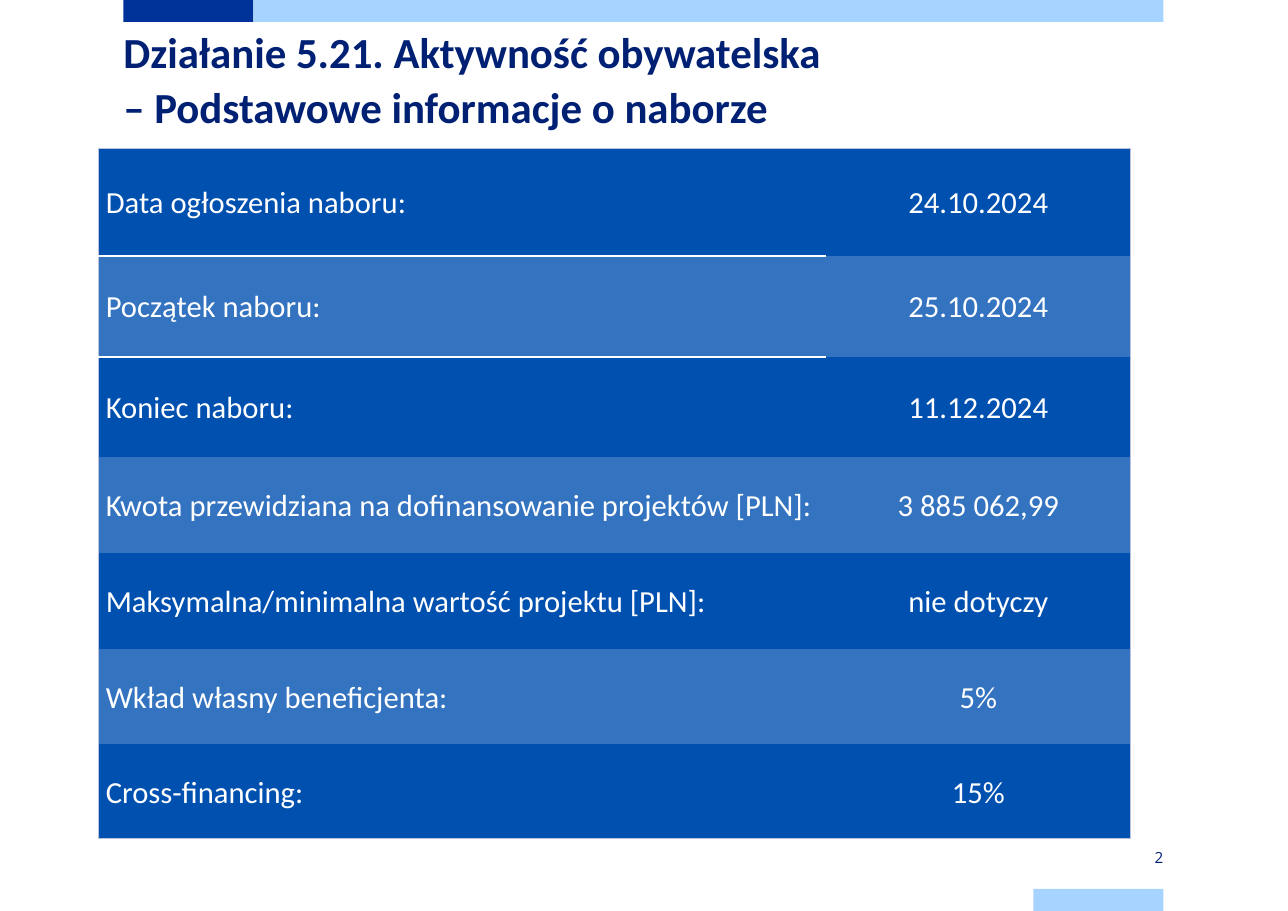
from pptx import Presentation
from pptx.dml.color import RGBColor as RGB
from pptx.enum.shapes import MSO_SHAPE as Shape
from pptx.enum.text import MSO_ANCHOR as Anchor, MSO_AUTO_SIZE as AutoSize, PP_ALIGN as Align
from pptx.oxml import parse_xml
from pptx.oxml.ns import nsdecls
from pptx.util import Inches, Pt

THEME = {
    "navy": "003399", "sky": "A6D3FF", "row": "0050B0", "band": "3373C0",
    "edge": "BDC2DC", "rule": "FFFFFF",
    "title": {"name": "Calibri", "size": Pt(28), "bold": True, "color": "002073"},
    "cell": {"name": "Calibri", "size": Pt(20), "bold": False, "color": "FFFFFF"},
    "number": {"name": "Open Sans", "size": Pt(10), "bold": False, "color": "002073"},
}
PLAIN_TABLE = "{2D5ABB26-0587-4C30-8999-92F81FD0307C}"


def style(paragraph, look, **layout):
    for key, value in layout.items():
        setattr(paragraph, key, value)
    for key, value in THEME[look].items():
        if key == "color":
            paragraph.font.color.rgb = RGB.from_string(value)
        else:
            setattr(paragraph.font, key, value)


def set_frame(frame, anchor, top=0, bottom=0):
    values = {"margin_left": 0, "margin_right": 0, "margin_top": top, "margin_bottom": bottom,
              "word_wrap": True, "auto_size": AutoSize.NONE, "vertical_anchor": anchor}
    for key, value in values.items():
        setattr(frame, key, value)


deck = Presentation()
deck.slide_width, deck.slide_height = Inches(11.69), Inches(8.27)
slide = deck.slides.add_slide(deck.slide_layouts[5])

# Page grid: eight columns between the margins
LEFT, COLUMN, BAR = Inches(1.12), Inches(1.18), Inches(0.2)
foot = deck.slide_height - BAR

# Bars at the page edges: first column, columns, top, colour
for first, span, top, colour in [(0, 1, 0, "navy"), (1, 7, 0, "sky"), (7, 1, foot, "sky")]:
    bar = slide.shapes.add_shape(Shape.RECTANGLE, LEFT + first * COLUMN, top, span * COLUMN, BAR)
    bar.shadow.inherit = False
    bar.fill.solid()
    bar.fill.fore_color.rgb = RGB.from_string(THEME[colour])
    bar.line.fill.background()

# Title
title = slide.shapes.title
title.left, title.top, title.width, title.height = LEFT, BAR, Inches(10.24), Inches(1.1)
set_frame(title.text_frame, Anchor.TOP)
heading = title.text_frame.paragraphs[0]
heading.add_run().text = "Działanie 5.21. Aktywność obywatelska"
heading.add_line_break()
heading.add_run().text = "– Podstawowe informacje o naborze"
style(heading, "title", alignment=Align.LEFT, line_spacing=Pt(36))

# Call details
details = [
    ("Data ogłoszenia naboru:", "24.10.2024", 0.97),
    ("Początek naboru:", "25.10.2024", 0.92),
    ("Koniec naboru:", "11.12.2024", 0.91),
    ("Kwota przewidziana na dofinansowanie projektów [PLN]:", "3 885 062,99", 0.87),
    ("Maksymalna/minimalna wartość projektu [PLN]:", "nie dotyczy", 0.87),
    ("Wkład własny beneficjenta:", "5%", 0.87),
    ("Cross-financing:", "15%", 0.85),
]
last = len(details) - 1
holder = slide.shapes.add_table(len(details), 2, Inches(0.89), Inches(1.35),
                                Inches(9.37), Inches(6.26))
table = holder.table
table.first_row = table.horz_banding = False
table._tbl.tblPr.find("{*}tableStyleId").text = PLAIN_TABLE
for column, width in zip(table.columns, (6.61, 2.76)):
    column.width = Inches(width)

for r, (label, answer, height) in enumerate(details):
    table.rows[r].height = Inches(height)
    for c, (text, align) in enumerate([(label, Align.LEFT), (answer, Align.CENTER)]):
        cell = table.cell(r, c)
        cell.text = text
        cell.vertical_anchor = Anchor.MIDDLE
        cell.margin_left = cell.margin_right = Inches(0.07)
        cell.margin_top = cell.margin_bottom = 0
        style(cell.text_frame.paragraphs[0], "cell", alignment=align, line_spacing=1.07)
        cell.fill.solid()
        cell.fill.fore_color.rgb = RGB.from_string(THEME["band" if r % 2 else "row"])

        # Thin outer edge, white rule under the first label
        edge, rule = ("edge", 0.5), ("rule", 1.5)
        borders = {"lnL" if c == 0 else "lnR": edge}
        if r == 0:
            borders["lnT"] = edge
        if r == last:
            borders["lnB"] = edge
        if c == 0 and r < 2:
            borders["lnT" if r else "lnB"] = rule
        for place, (tag, (colour, width)) in enumerate(borders.items()):
            cell._tc.tcPr.insert(place, parse_xml(
                f'<a:{tag} {nsdecls("a")} w="{Pt(width)}"><a:solidFill>'
                f'<a:srgbClr val="{THEME[colour]}"/></a:solidFill></a:{tag}>'))

# Page number
number = slide.shapes.add_textbox(LEFT + 7 * COLUMN, Inches(7.68), COLUMN, BAR).text_frame
set_frame(number, Anchor.MIDDLE, Inches(0.08), Inches(0.08))
number.text = "2"
style(number.paragraphs[0], "number", alignment=Align.RIGHT)

deck.save("out.pptx")
